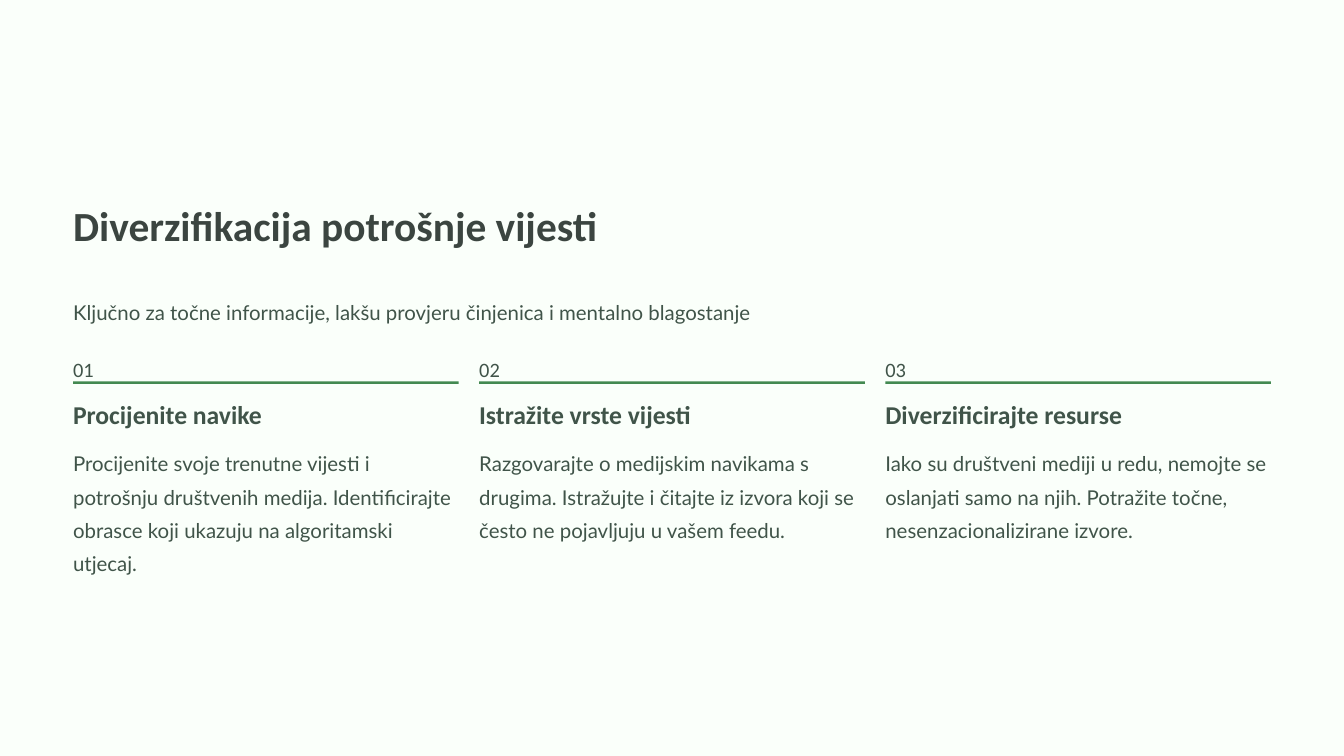
import pptx
import pptx.util
from pptx.dml.color import RGBColor
from pptx.enum.shapes import MSO_SHAPE
from pptx.enum.text import MSO_ANCHOR, MSO_AUTO_SIZE, PP_ALIGN

PAPER = RGBColor(0xFA, 0xFF, 0xFA)
TITLE = RGBColor(0x3B, 0x45, 0x40)
INK = RGBColor(0x40, 0x54, 0x49)
GREEN = RGBColor(0x43, 0x89, 0x51)

WIDTH, HEIGHT = 16, 9
MARGIN = 0.87
GAP = 0.245
CONTENT = WIDTH - 2 * MARGIN
COLUMN = (CONTENT - 2 * GAP) / 3

STEPS = [
    ("Procijenite navike",
     "Procijenite svoje trenutne vijesti i potrošnju društvenih medija. "
     "Identificirajte obrasce koji ukazuju na algoritamski utjecaj."),
    ("Istražite vrste vijesti",
     "Razgovarajte o medijskim navikama s drugima. Istražujte i čitajte iz "
     "izvora koji se često ne pojavljuju u vašem feedu."),
    ("Diverzificirajte resurse",
     "Iako su društveni mediji u redu, nemojte se oslanjati samo na njih. "
     "Potražite točne, nesenzacionalizirane izvore."),
]


def inches(*lengths):
    return [pptx.util.Inches(length) for length in lengths]


def format_text(sp, text, size, leading, font="Calibri", color=INK,
                bold=False, wrap=False):
    tf = sp.text_frame
    tf.text = text
    tf.word_wrap = wrap
    tf.auto_size = MSO_AUTO_SIZE.NONE
    tf.vertical_anchor = MSO_ANCHOR.TOP
    tf.margin_left = tf.margin_top = tf.margin_right = tf.margin_bottom = 0
    p = tf.paragraphs[0]
    p.alignment = PP_ALIGN.LEFT
    p.line_spacing = pptx.util.Pt(leading)
    p.space_before = pptx.util.Pt(0)
    r = p.runs[0]
    r.font.name = font
    r.font.size = pptx.util.Pt(size)
    r.font.bold = bold
    r.font.color.rgb = color


def add_text(s, box, text, size=17.5, leading=28.5, **style):
    format_text(s.shapes.add_textbox(*inches(*box)), text, size, leading, **style)


def add_title(s, text):
    sp = s.shapes.title
    sp.left, sp.top, sp.width, sp.height = inches(MARGIN, 2.36, 8.1, 0.62)
    format_text(sp, text, 35.5, 44.5, color=TITLE, bold=True)


def add_rule(s, left, top):
    sp = s.shapes.add_shape(MSO_SHAPE.RECTANGLE, *inches(left, top, COLUMN, 0.03))
    sp.shadow.inherit = False
    sp.fill.solid()
    sp.fill.fore_color.rgb = GREEN
    sp.line.fill.background()


def add_step(s, index, heading, body):
    left = MARGIN + index * (COLUMN + GAP)
    add_text(s, (left, 4.15, 0.25, 0.31), f"{index + 1:02}")
    add_rule(s, left, 4.54)
    add_text(s, (left, 4.73, 3.14, 0.39), heading, 22, 27.5, bold=True)
    add_text(s, (left, 5.27, COLUMN, 1.19), body, font="Lato", wrap=True)


def main():
    prs = pptx.Presentation()
    prs.slide_width, prs.slide_height = inches(WIDTH, HEIGHT)
    s = prs.slides.add_slide(prs.slide_layouts[5])
    s.background.fill.solid()
    s.background.fill.fore_color.rgb = PAPER
    add_title(s, "Diverzifikacija potrošnje vijesti")
    add_text(s, (MARGIN, 3.47, CONTENT, 0.4),
             "Ključno za točne informacije, lakšu provjeru činjenica "
             "i mentalno blagostanje", font="Lato")
    for index, (heading, body) in enumerate(STEPS):
        add_step(s, index, heading, body)
    prs.save("out.pptx")


if __name__ == "__main__":
    main()
